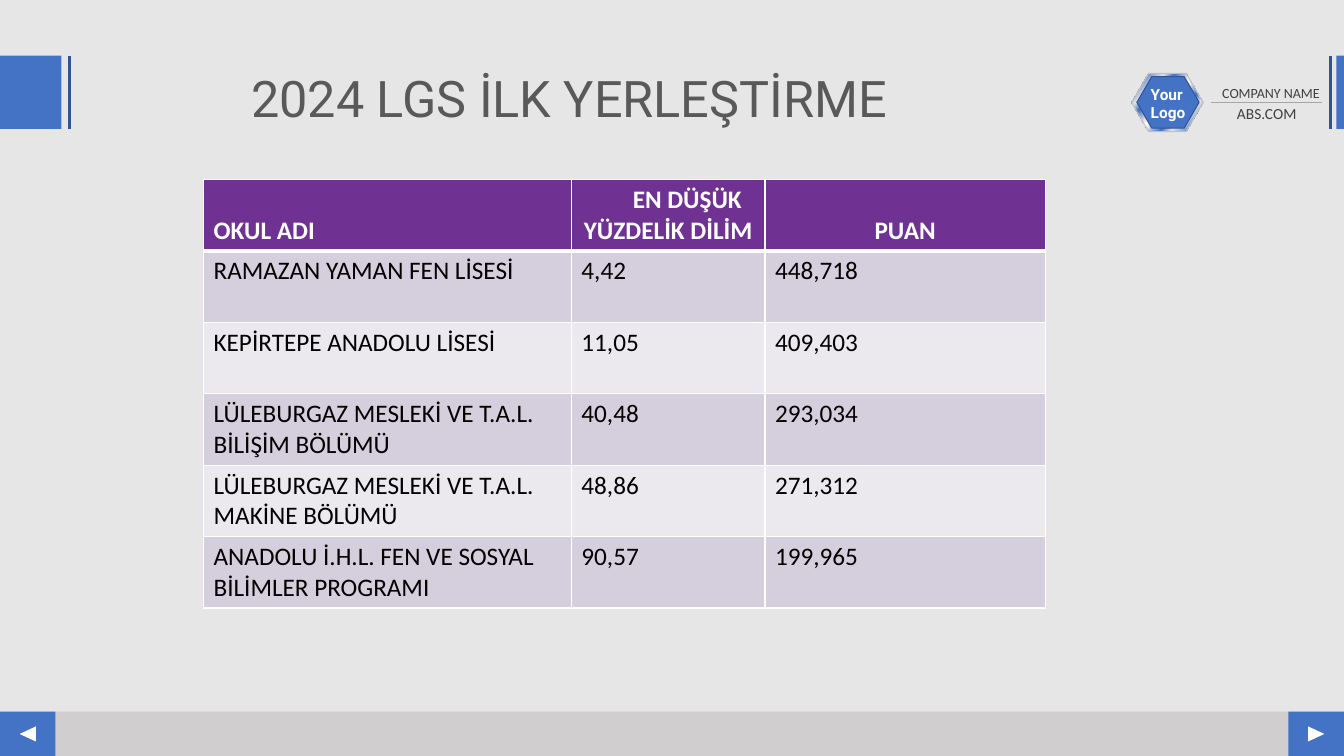
from lxml import etree
from pptx import Presentation
from pptx.dml.color import RGBColor
from pptx.enum import shapes, text
from pptx.oxml.ns import qn
from pptx.util import Cm, Pt

WIDTH, HEIGHT = 33.87, 19.05
BLUE, NAVY, WHITE, GREY = "4472C4", "2F5597", "FFFFFF", "404040"
PURPLE, BANDS = "6F3293", ("D5CEDC", "EBE8EE")
LEFT, CENTER = text.PP_ALIGN.LEFT, text.PP_ALIGN.CENTER
TOP, BOTTOM = text.MSO_ANCHOR.TOP, text.MSO_ANCHOR.BOTTOM
SHAPE = shapes.MSO_SHAPE

TITLE = "2024 LGS İLK YERLEŞTİRME"
HEADER = ("OKUL ADI", "EN DÜŞÜK YÜZDELİK DİLİM", "PUAN")
SCHOOLS = [
    ("RAMAZAN YAMAN FEN LİSESİ", "4,42", "448,718"),
    ("KEPİRTEPE ANADOLU LİSESİ", "11,05", "409,403"),
    ("LÜLEBURGAZ MESLEKİ VE T.A.L. BİLİŞİM BÖLÜMÜ", "40,48", "293,034"),
    ("LÜLEBURGAZ MESLEKİ VE T.A.L. MAKİNE BÖLÜMÜ", "48,86", "271,312"),
    ("ANADOLU İ.H.L. FEN VE SOSYAL BİLİMLER PROGRAMI", "90,57", "199,965"),
]
COLUMN_WIDTHS, ROW_HEIGHT = (9.27, 4.88, 7.06), 1.8
RING_STOPS = [(0, "E6E6E6"), (8, BLUE), (26, "E6E6E6"), (34, BLUE),
              (46, "E6E6E6"), (50, WHITE), (54, "E6E6E6"), (66, BLUE),
              (74, "E6E6E6"), (92, BLUE), (100, "E6E6E6")]


def color(hex_value):
    return RGBColor.from_string(hex_value)


def add_solid(parent, tag, hex_value):
    fill = etree.SubElement(etree.SubElement(parent, qn(tag)), qn("a:solidFill"))
    etree.SubElement(fill, qn("a:srgbClr"), val=hex_value)
    return fill.getparent()


def add_box(slide, kind, box, fill, line=None, rotation=0):
    shape = slide.shapes.add_shape(kind, *map(Cm, box))
    shape.shadow.inherit = False
    shape.rotation = rotation
    shape.fill.solid()
    shape.fill.fore_color.rgb = color(fill)
    if line:
        shape.line.color.rgb = color(line)
        shape.line.width = Pt(0.75)
    else:
        shape.line.fill.background()
    return shape


def add_line(slide, ends, hex_value, width):
    line = slide.shapes.add_connector(shapes.MSO_CONNECTOR.STRAIGHT, *map(Cm, ends))
    line.line.color.rgb = color(hex_value)
    line.line.width = Pt(width)
    etree.SubElement(line._element.spPr, qn("a:effectLst"))


def write(paragraph, words, size, font, hex_value, bold=False, align=LEFT):
    paragraph.alignment = align
    run = paragraph.add_run()
    run.text = words
    run.font.size = Pt(size)
    run.font.name = font
    run.font.bold = bold
    run.font.color.rgb = color(hex_value)


def add_text(slide, box, inset, words, size, font, hex_value, **style):
    frame = slide.shapes.add_textbox(*map(Cm, box)).text_frame
    frame.word_wrap = True
    frame.margin_left, frame.margin_right = Cm(inset), 0
    write(frame.paragraphs[0], words, size, font, hex_value, **style)
    return frame.paragraphs[0]


def add_footer(slide):
    top, height, button = 17.93, 1.12, 1.4
    arrow_width, arrow_height, gap = 0.38, 0.41, 0.51
    add_box(slide, SHAPE.RECTANGLE, (0, top, WIDTH, height), "D0CECE")
    for button_left, arrow_left, rotation in (
            (0, gap, 270),
            (WIDTH - button, WIDTH - gap - arrow_width, 90)):
        add_box(slide, SHAPE.RECTANGLE, (button_left, top, button, height), BLUE)
        add_box(slide, SHAPE.ISOSCELES_TRIANGLE,
                (arrow_left, 18.29, arrow_width, arrow_height), WHITE,
                rotation=rotation)


def add_side_accents(slide):
    top, height = 1.4, 1.85
    for left, width, line_x in ((0, 1.55, 1.75), (33.68, 0.19, 33.53)):
        add_box(slide, SHAPE.RECTANGLE, (left, top, width, height), BLUE)
        add_line(slide, (line_x, top, line_x, top + height), NAVY, 2.25)


def add_company(slide):
    left = 30.53
    add_text(slide, (left, 2.01, 3, 0.69), 0, "COMPANY NAME", 10, "Calibri",
             GREY, align=CENTER)
    add_text(slide, (left, 2.51, 2.79, 0.74), 0, "ABS.COM", 11, "Calibri",
             GREY, align=CENTER)
    add_line(slide, (left, 2.59, left + 2.79, 2.59), "A6A6A6", 0.5)

    ring = add_box(slide, SHAPE.HEXAGON, (28.52, 1.85, 1.8, 1.47), BLUE, "C0C0C0")
    badge = add_box(slide, SHAPE.HEXAGON, (28.65, 1.93, 1.57, 1.3), BLUE, NAVY)
    for hexagon in (ring, badge):
        hexagon.adjustments[0] = 0.29
    ring.fill.gradient()
    ring.fill.gradient_angle = 315
    stops = ring._element.spPr.find(qn("a:gradFill")).find(qn("a:gsLst"))
    for stop in list(stops):
        stops.remove(stop)
    for percent, hex_value in RING_STOPS:
        stop = etree.SubElement(stops, qn("a:gs"), pos=str(percent * 1000))
        etree.SubElement(stop, qn("a:srgbClr"), val=hex_value)
    add_text(slide, (28.75, 2.01, 1.4, 1.19), 0.25, "Your Logo", 11, "Roboto",
             WHITE, bold=True)


def set_borders(cell, top, bottom):
    """Draw white borders; the side ones are 1 pt wide."""
    properties = cell._tc.get_or_add_tcPr()
    widths = {"a:lnL": 1, "a:lnR": 1, "a:lnT": top, "a:lnB": bottom}
    for index, (tag, width) in enumerate(widths.items()):
        border = add_solid(properties, tag, WHITE)
        border.set("w", str(Pt(width)))
        properties.insert(index, border)


def add_school_table(slide):
    rows = [HEADER] + SCHOOLS
    table = slide.shapes.add_table(
        len(rows), len(HEADER), Cm(5.13), Cm(4.52),
        Cm(sum(COLUMN_WIDTHS)), Cm(ROW_HEIGHT * len(rows))).table
    for column, width in zip(table.columns, COLUMN_WIDTHS):
        column.width = Cm(width)
    for r, row in enumerate(rows):
        table.rows[r].height = Cm(ROW_HEIGHT)
        is_header = r == 0
        for c, words in enumerate(row):
            cell = table.cell(r, c)
            cell.vertical_anchor = BOTTOM if is_header else TOP
            cell.fill.solid()
            cell.fill.fore_color.rgb = color(PURPLE if is_header else BANDS[(r - 1) % 2])
            set_borders(cell, 3 if r == 1 else 1, 3 if is_header else 1)
            write(cell.text_frame.paragraphs[0], words, 18, "Calibri",
                  WHITE if is_header else "000000", bold=is_header,
                  align=CENTER if is_header and c else LEFT)
    first_line = table.cell(0, 1).text_frame.paragraphs[0]
    first_line._p.get_or_add_pPr().set("indent", str(Cm(0.96)))


def main():
    presentation = Presentation()
    presentation.slide_width, presentation.slide_height = Cm(WIDTH), Cm(HEIGHT)
    slide = presentation.slides.add_slide(presentation.slide_layouts[6])
    slide.background.fill.solid()
    slide.background.fill.fore_color.rgb = color("E7E6E6")
    add_footer(slide)
    add_side_accents(slide)
    add_company(slide)
    title = add_text(slide, (2.01, 1.75, 26.44, 2.21), 4.32, TITLE, 36, "Roboto", "595959")
    title.line_spacing = 0.9
    add_school_table(slide)
    presentation.save("out.pptx")


if __name__ == "__main__":
    main()
